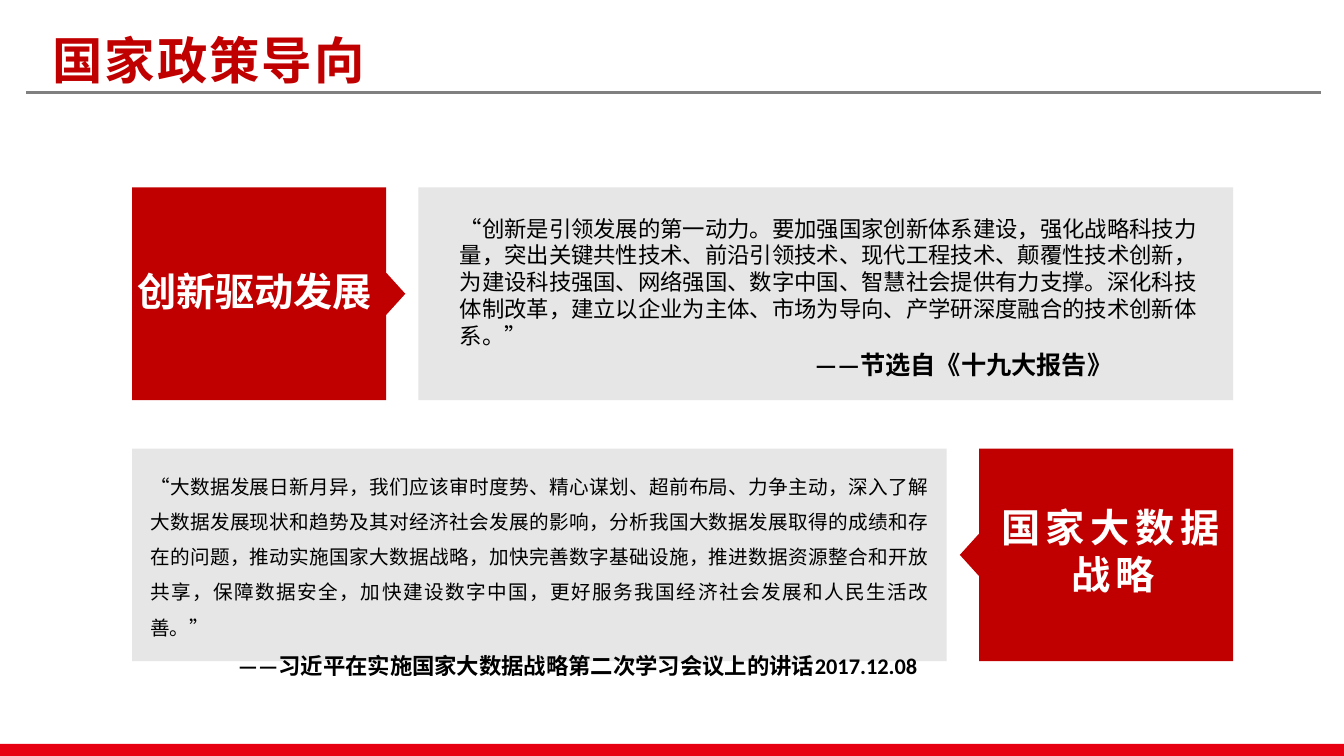
from dataclasses import dataclass

from pptx import Presentation
from pptx.dml.color import RGBColor
from pptx.enum.shapes import MSO_CONNECTOR, MSO_SHAPE
from pptx.enum.text import MSO_ANCHOR, PP_ALIGN
from pptx.oxml.ns import qn
from pptx.util import Inches, Pt

RECT, STRAIGHT = MSO_SHAPE.RECTANGLE, MSO_CONNECTOR.STRAIGHT
TOP, MIDDLE = MSO_ANCHOR.TOP, MSO_ANCHOR.MIDDLE
LEFT, CENTER, JUSTIFY = PP_ALIGN.LEFT, PP_ALIGN.CENTER, PP_ALIGN.JUSTIFY
CJK, LATIN = "Noto Sans CJK SC", "Calibri"
RED, GRAY, WHITE, BLACK = "C00000", "E7E6E6", "FFFFFF", "000000"
PANEL_W, LABEL_W, CARD_H = 8.08, 2.52, 2.11


@dataclass
class Para:
    text: str
    size: float
    color: str = BLACK
    bold: bool = False
    font: str = CJK
    east_asian: str = CJK
    align: PP_ALIGN = LEFT
    line_spacing: float | None = None
    tracking: float = 0
    indent: float = 0


@dataclass
class TextBox:
    left: float
    top: float
    width: float
    height: float
    paras: list[Para]
    anchor: MSO_ANCHOR = TOP
    inset: float = 0


@dataclass
class Card:
    top: float
    panel_left: float
    label_left: float
    tip_right: bool


def rgb(color: str) -> RGBColor:
    return RGBColor.from_string(color)


def paint(sp, color: str) -> None:
    sp.shadow.inherit = False
    sp.fill.solid()
    sp.fill.fore_color.rgb = rgb(color)
    sp.line.fill.background()


def add_rect(s, left: float, top: float, width: float, height: float, color: str) -> None:
    paint(s.shapes.add_shape(RECT, Inches(left), Inches(top), Inches(width), Inches(height)), color)


def add_card(s, card: Card) -> None:
    add_rect(s, card.panel_left, card.top, PANEL_W, CARD_H, GRAY)
    # Label block with a small pointer towards the panel
    far, near, step = card.label_left, card.label_left + LABEL_W, 0.19
    if not card.tip_right:
        far, near, step = near, far, -step
    middle, bottom = card.top + CARD_H / 2, card.top + CARD_H
    points = [(near, card.top), (near, middle - 0.21), (near + step, middle),
              (near, middle + 0.21), (near, bottom), (far, bottom)]
    builder = s.shapes.build_freeform(Inches(far), Inches(card.top))
    builder.add_line_segments([(Inches(x), Inches(y)) for x, y in points], close=True)
    paint(builder.convert_to_shape(), RED)


def add_text(s, box: TextBox) -> None:
    sp = s.shapes.add_textbox(Inches(box.left), Inches(box.top), Inches(box.width), Inches(box.height))
    tf = sp.text_frame
    tf.word_wrap = True
    tf.vertical_anchor = box.anchor
    tf.margin_left = tf.margin_right = tf.margin_top = tf.margin_bottom = Inches(box.inset)
    for i, para in enumerate(box.paras):
        p = tf.paragraphs[0] if i == 0 else tf.add_paragraph()
        p.alignment = para.align
        if para.line_spacing:
            p.line_spacing = para.line_spacing
        if para.indent:
            p._p.get_or_add_pPr().set("marL", str(Inches(para.indent)))
        r = p.add_run()
        r.text = para.text
        r.font.name, r.font.size, r.font.bold = para.font, Pt(para.size), para.bold
        r.font.color.rgb = rgb(para.color)
        # East Asian typeface and letter spacing
        rPr = r._r.get_or_add_rPr()
        rPr.set("lang", "zh-CN")
        if para.tracking:
            rPr.set("spc", str(round(para.tracking * 100)))
        ea = rPr.makeelement(qn("a:ea"), {"typeface": para.east_asian})
        rPr.find(qn("a:latin")).addnext(ea)


CARDS = [
    Card(1.86, panel_left=4.15, label_left=1.31, tip_right=True),
    Card(4.45, panel_left=1.31, label_left=9.71, tip_right=False),
]

REPORT_QUOTE = (
    "“创新是引领发展的第一动力。要加强国家创新体系建设，强化战略科技力量，"
    "突出关键共性技术、前沿引领技术、现代工程技术、颠覆性技术创新，"
    "为建设科技强国、网络强国、数字中国、智慧社会提供有力支撑。"
    "深化科技体制改革，建立以企业为主体、市场为导向、产学研深度融合的技术创新体系。”"
)
SPEECH_QUOTE = (
    "“大数据发展日新月异，我们应该审时度势、精心谋划、超前布局、力争主动，"
    "深入了解大数据发展现状和趋势及其对经济社会发展的影响，"
    "分析我国大数据发展取得的成绩和存在的问题，推动实施国家大数据战略，"
    "加快完善数字基础设施，推进数据资源整合和开放共享，保障数据安全，"
    "加快建设数字中国，更好服务我国经济社会发展和人民生活改善。”"
)

TEXTS = [
    TextBox(0.49, 0.25, 8.5, 0.67, [Para("国家政策导向", 36, RED, True, tracking=1.4)], MIDDLE, 0.03),
    TextBox(1.19, 2.62, 2.67, 0.54, [Para("创新驱动发展", 28, WHITE, True, align=CENTER)], MIDDLE, 0.03),
    TextBox(9.77, 4.99, 2.54, 1.42,
            [Para("国家大数据战略", 28, WHITE, True, align=CENTER, tracking=4)]),
    TextBox(4.56, 2.13, 7.35, 1.65, [
        Para(REPORT_QUOTE, 16),
        Para("——节选自《十九大报告》", 18, bold=True, font=LATIN, east_asian=LATIN, indent=3.52),
    ]),
    TextBox(1.49, 4.59, 7.72, 1.82, [
        Para(SPEECH_QUOTE, 14, font=LATIN, align=JUSTIFY, line_spacing=1.5),
        Para("——习近平在实施国家大数据战略第二次学习会议上的讲话2017.12.08", 16, bold=True,
             font=LATIN, east_asian=LATIN, align=JUSTIFY, line_spacing=1.5, indent=0.87),
    ]),
]

prs = Presentation()
prs.slide_width, prs.slide_height = Inches(13.33), Inches(7.5)
s = prs.slides.add_slide(prs.slide_layouts[6])

# Header rule and footer band
rule = s.shapes.add_connector(STRAIGHT, Inches(0.26), Inches(0.92), Inches(13.1), Inches(0.92))
rule.line.color.rgb = rgb("808080")
rule.line.width = Pt(2.25)
rule_props = rule._element.spPr
rule_props.append(rule_props.makeelement(qn("a:effectLst"), {}))
add_rect(s, 0, 7.38, 13.33, 0.12, "E60012")

# Panels with their labels, then all text
for card in CARDS:
    add_card(s, card)
for box in TEXTS:
    add_text(s, box)

prs.save("out.pptx")
